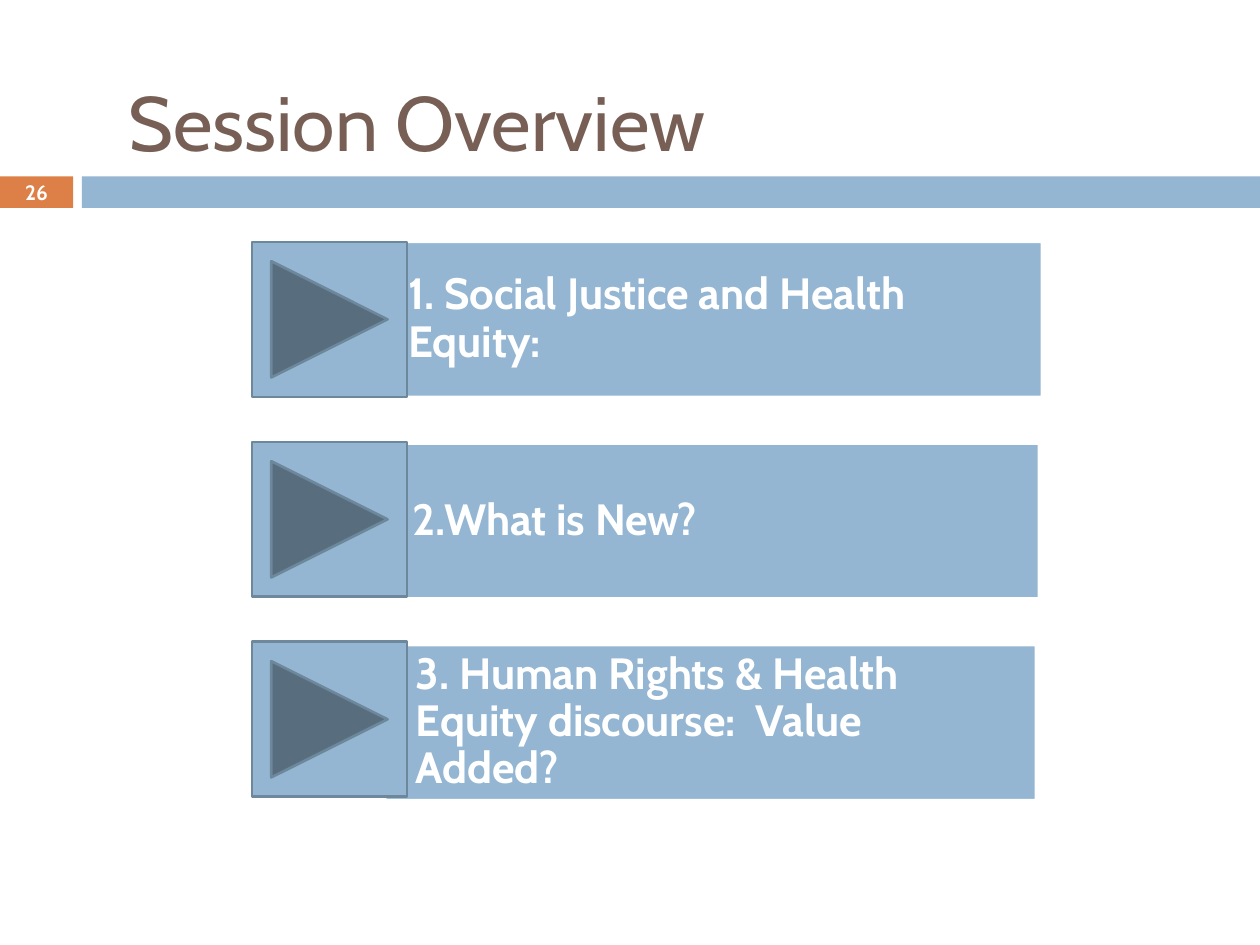
from pptx import Presentation
from pptx.dml.color import RGBColor
from pptx.enum.shapes import MSO_SHAPE
from pptx.enum.text import MSO_ANCHOR, PP_ALIGN
from pptx.util import Inches, Pt

RECT = MSO_SHAPE.RECTANGLE
PLATE = MSO_SHAPE.PENTAGON
NEXT = MSO_SHAPE.ACTION_BUTTON_FORWARD_OR_NEXT
MIDDLE = MSO_ANCHOR.MIDDLE
LEFT, CENTER = PP_ALIGN.LEFT, PP_ALIGN.CENTER

COLS, ROWS, CELL = 100, 75, Inches(0.1)
BLUE, EDGE, ORANGE = "94B6D2", "6D879B", "DD8047"
BROWN, WHITE = "775F55", "FFFFFF"
TOPICS = [
    "1. Social Justice and Health Equity:",
    "2.What is New?",
    "3. Human Rights & Health Equity discourse:  Value Added?",
]


def color(code):
    """Turn a hex string into a colour."""
    return RGBColor.from_string(code)


def place(box):
    """Turn a box in grid cells into slide lengths."""
    return [round(n * CELL) for n in box]


def block(slide, kind, box, fill, line=None):
    """Add a filled shape, outlined if a line colour is given."""
    shape = slide.shapes.add_shape(kind, *place(box))
    shape.shadow.inherit = False
    shape.fill.solid()
    shape.fill.fore_color.rgb = color(fill)
    if line:
        shape.line.color.rgb = color(line)
        shape.line.width = Pt(1.5)
    else:
        shape.line.fill.background()
    return shape


def label(slide, box, text, size, tint, bold=True, align=LEFT, space=1.0,
          pads=(1, 0.5, 1, 0.5)):
    """Add a wrapped, vertically centred text box."""
    frame = slide.shapes.add_textbox(*place(box)).text_frame
    left, top, right, low = place(pads)
    look = {"word_wrap": True, "vertical_anchor": MIDDLE, "margin_left": left,
            "margin_top": top, "margin_right": right, "margin_bottom": low}
    for name, value in look.items():
        setattr(frame, name, value)
    para = frame.paragraphs[0]
    para.alignment, para.line_spacing = align, space
    run = para.add_run()
    run.text = text
    for name, value in {"name": "Cabin", "size": Pt(size), "bold": bold}.items():
        setattr(run.font, name, value)
    run.font.color.rgb = color(tint)


def header(slide, box, title, number):
    """Draw the title above a band that starts with the slide number."""
    x, y, w, h = box
    band, tab, gap = 2.5, 5.8, 0.7
    top = y + h - band
    block(slide, RECT, (x, top, tab, band), ORANGE)
    block(slide, RECT, (x + tab + gap, top, w - tab - gap, band), BLUE)
    label(slide, (x + 9.2, y + 3.3, 88.3, 12.5), title, 44, BROWN, bold=False)
    label(slide, (x, top, tab, band), number, 11.9, WHITE, align=CENTER)


def topic(slide, box, text, lift):
    """Draw one topic plate with its text and a play button."""
    x, y, w, h = box
    block(slide, PLATE, box, BLUE, WHITE).rotation = 180
    label(slide, (x + 3.1, y, w - 3.1, h), text, 25, WHITE, space=0.9,
          pads=(5.4, 1, 1.9, 1))
    block(slide, NEXT, (20, y - lift, h, h), BLUE, EDGE)


def topics(slide, box, items):
    """Stack the topics, each plate a little narrower than the last."""
    x, y, w, h = box
    high = 12.3
    step = (h - high) / (len(items) - 1)
    for i, text in enumerate(items):
        trim = 0.3 * i
        topic(slide, (x + trim, y + i * step, w - 1.8 * trim, high), text,
              0.13 * i)


def main():
    """Build and save the slide."""
    deck = Presentation()
    deck.slide_width, deck.slide_height = COLS * CELL, ROWS * CELL
    slide = deck.slides.add_slide(deck.slide_layouts[6])
    header(slide, (0, 0, COLS, 16.5), "Session Overview", "26")
    topics(slide, (23.9, 19.2, 58.8, 44.3), TOPICS)
    deck.save("out.pptx")


if __name__ == "__main__":
    main()
